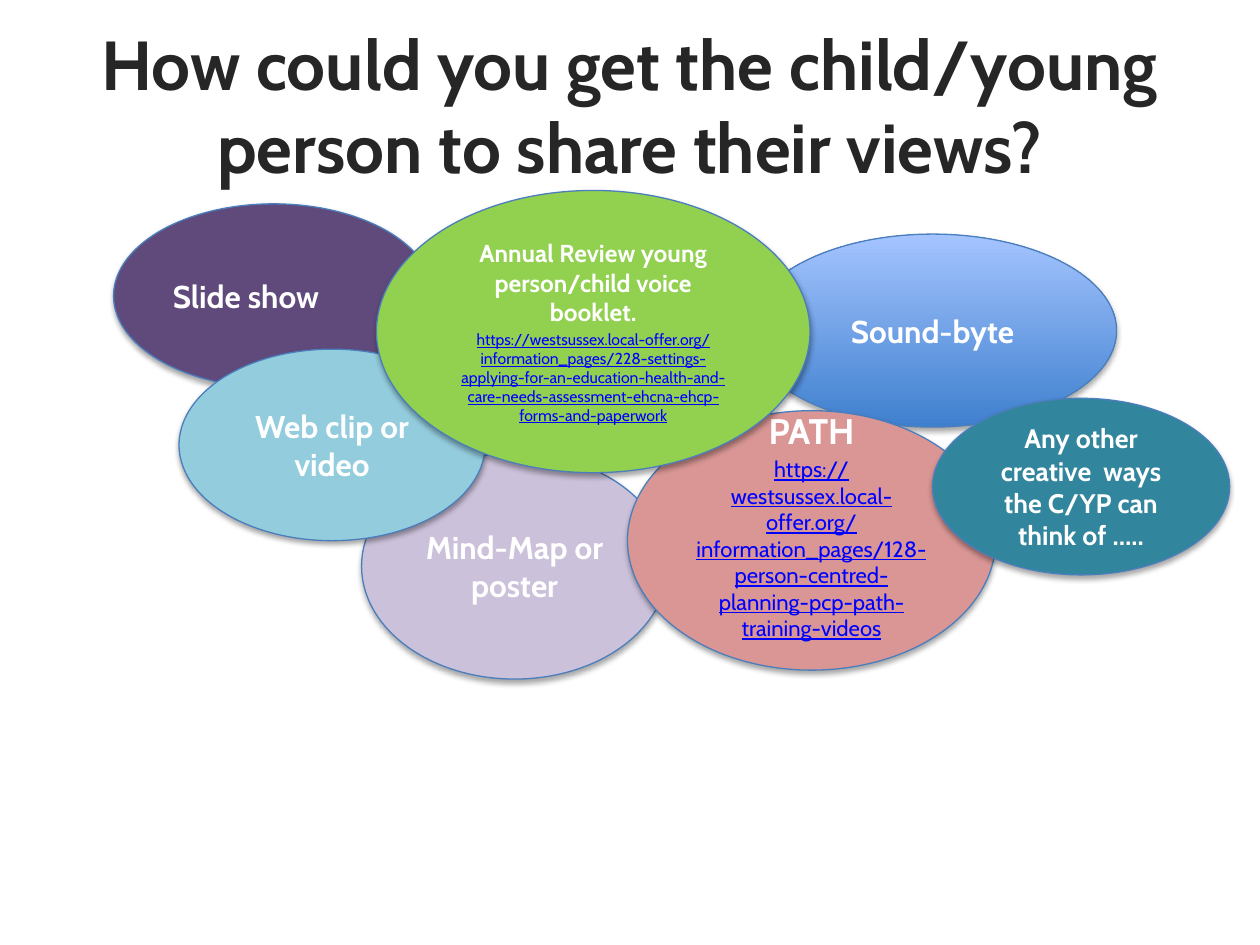
from lxml.etree import SubElement
from pptx import Presentation
from pptx.dml.color import RGBColor
from pptx.enum.shapes import MSO_SHAPE
from pptx.enum.text import MSO_ANCHOR, MSO_AUTO_SIZE, PP_ALIGN
from pptx.oxml.ns import qn
from pptx.util import Cm, Pt

WHITE = RGBColor(0xFF, 0xFF, 0xFF)
INK = RGBColor(0x26, 0x26, 0x26)
LINK = RGBColor(0x00, 0x00, 0xFF)
OUTLINE = RGBColor(0x4B, 0x7E, 0xBC)
LILAC = RGBColor(0xCC, 0xC1, 0xDA)
BLUE = RGBColor(0x3F, 0x80, 0xCE)
PALE_BLUE = RGBColor(0xA4, 0xC4, 0xFF)
PINK = RGBColor(0xD9, 0x96, 0x94)
PURPLE = RGBColor(0x60, 0x4A, 0x7B)
AQUA = RGBColor(0x93, 0xCD, 0xDD)
GREEN = RGBColor(0x92, 0xD0, 0x50)
TEAL = RGBColor(0x31, 0x85, 0x9C)

PATH_LINK = ("https://westsussex.local-offer.org/information_pages/"
             "128-person-centred-planning-pcp-path-training-videos")
BOOKLET_LINK = ("https://westsussex.local-offer.org/information_pages/"
                "228-settings-applying-for-an-education-health-and-care-needs-"
                "assessment-ehcna-ehcp-forms-and-paperwork")


class IdeaSlide:
    font = "Cabin"

    def __init__(self, deck):
        self.page = deck.slides.add_slide(deck.slide_layouts[5])

    def add_span(self, para, text, size, color, bold=True, underline=False):
        span = para.add_run()
        span.text = text
        span.font.name = self.font
        span.font.size = Pt(size)
        span.font.bold = bold
        span.font.underline = underline
        span.font.color.rgb = color

    def add_title(self, text, size, left, top, width, height):
        box = self.page.shapes.title
        box.left, box.top, box.width, box.height = map(Cm, (left, top, width, height))
        frame = box.text_frame
        frame.word_wrap = True
        frame.auto_size = MSO_AUTO_SIZE.NONE
        frame.vertical_anchor = MSO_ANCHOR.MIDDLE
        para = frame.paragraphs[0]
        para.alignment = PP_ALIGN.CENTER
        self.add_span(para, text, size, INK)

    def add_shadow(self, shape):
        shape.shadow.inherit = False
        effects = shape._element.spPr.find(qn("a:effectLst"))
        shadow = SubElement(effects, qn("a:outerShdw"), blurRad="40000",
                            dist="23000", dir="5400000", rotWithShape="0")
        black = SubElement(shadow, qn("a:srgbClr"), val="000000")
        SubElement(black, qn("a:alpha"), val="35000")

    def add_bubble(self, place, colors, label, size, link=None, link_size=None,
                   align=PP_ALIGN.CENTER, bottom=0.13):
        bubble = self.page.shapes.add_shape(MSO_SHAPE.OVAL, *map(Cm, place))
        # One colour is a plain fill, two run from bottom to top
        if len(colors) == 1:
            bubble.fill.solid()
            bubble.fill.fore_color.rgb = colors[0]
        else:
            bubble.fill.gradient()
            bubble.fill.gradient_angle = 90
            for stop, color in zip(bubble.fill.gradient_stops, colors):
                stop.color.rgb = color
        bubble.line.color.rgb = OUTLINE
        bubble.line.width = Pt(0.75)
        self.add_shadow(bubble)

        frame = bubble.text_frame
        frame.word_wrap = True
        frame.vertical_anchor = MSO_ANCHOR.MIDDLE
        frame.margin_bottom = Cm(bottom)
        para = frame.paragraphs[0]
        para.alignment = align
        self.add_span(para, label, size, WHITE)
        if link:
            para = frame.add_paragraph()
            para.alignment = align
            para.space_before = Pt(round(link_size * 0.2, 1))
            self.add_span(para, link, link_size, LINK, bold=False, underline=True)


def main():
    deck = Presentation()
    deck.slide_width, deck.slide_height = Cm(25.4), Cm(19.05)
    slide = IdeaSlide(deck)

    # Title
    slide.add_title("How could you get the child/young person to share their views?",
                    39.6, 0.56, 0.61, 24.26, 3)

    # Overlapping ideas, from back to front
    slide.add_bubble((7.29, 9.14, 6.17, 4.55), [LILAC], "Mind-Map or poster", 18)
    slide.add_bubble((15.09, 4.72, 7.42, 3.89), [BLUE, PALE_BLUE], "Sound-byte", 18)
    slide.add_bubble((12.65, 8.28, 7.42, 5.23), [PINK], "PATH", 20.3,
                     PATH_LINK, 12.6, bottom=0.75)
    slide.add_bubble((2.29, 4.11, 6.45, 3.71), [PURPLE], "Slide show", 18,
                     align=PP_ALIGN.LEFT)
    slide.add_bubble((3.61, 7.04, 6.17, 3.86), [AQUA], "Web clip or video", 18)
    slide.add_bubble((7.59, 3.84, 8.74, 5.69), [GREEN],
                     "Annual Review young person/child voice booklet.", 14,
                     BOOKLET_LINK, 9)
    slide.add_bubble((18.8, 8.03, 5.99, 3.56), [TEAL],
                     "Any other creative  ways the C/YP can think of …..", 15.3)

    deck.save("out.pptx")


if __name__ == "__main__":
    main()
